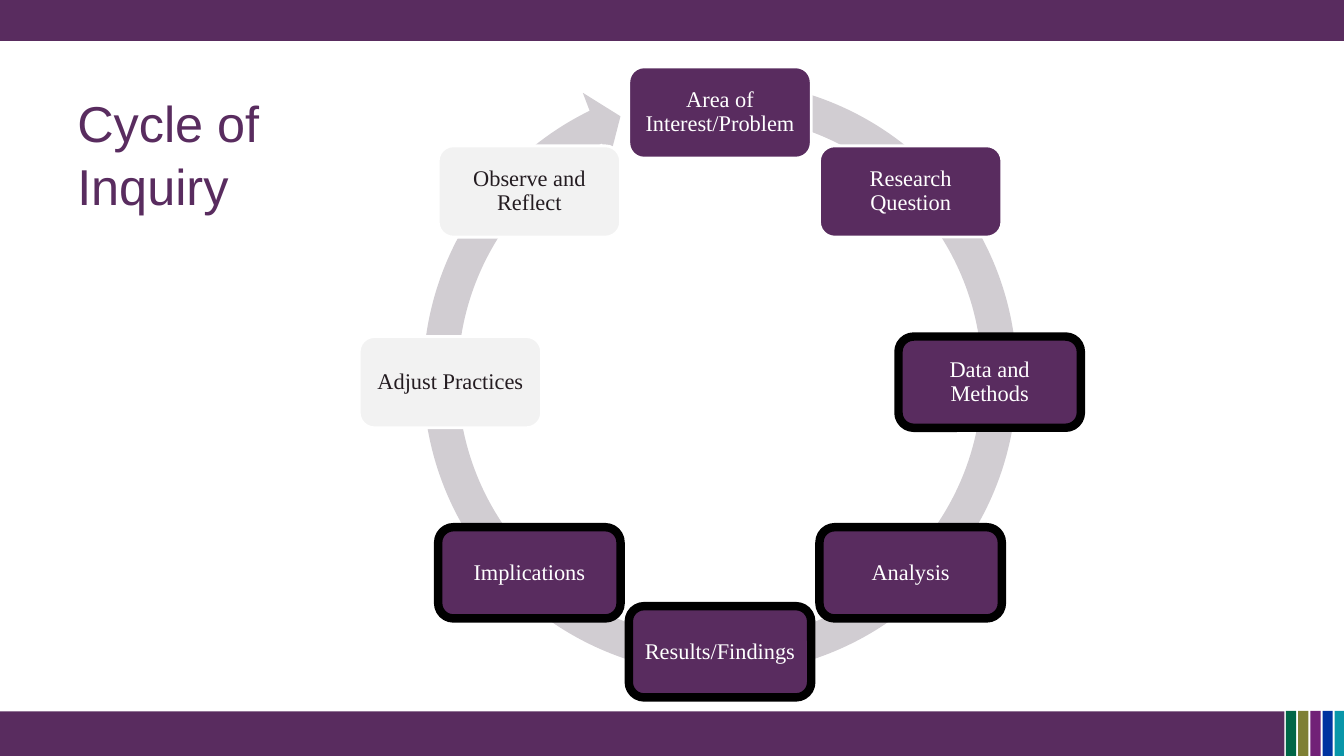
import math
import pptx
import pptx.util
import pptx.dml.color
import pptx.enum.shapes
import pptx.enum.text

Pt = pptx.util.Pt
RGB = pptx.dml.color.RGBColor.from_string
MSO = pptx.enum.shapes.MSO_SHAPE
ALIGN = pptx.enum.text.PP_ALIGN
ANCHOR = pptx.enum.text.MSO_ANCHOR

THEME = {
    "purple": "592C5F", "ring": "D1CDD2", "pale": "F2F2F2",
    "white": "FFFFFF", "black": "000000", "ink": "241C21",
    "stripes": ["006647", "7E8034", "712177", "0033A0", "0996A9"],
    "title_font": "Arial", "title_size": 36,
    "step_font": "Times New Roman", "step_size": 16,
}


def add_text(tf, text, font, size, color, align, spacing):
    tf.word_wrap = True
    tf.auto_size = pptx.enum.text.MSO_AUTO_SIZE.NONE
    tf.vertical_anchor = ANCHOR.MIDDLE
    p = tf.paragraphs[0]
    p.alignment = align
    p.line_spacing = spacing
    r = p.add_run()
    r.text = text
    r.font.name = font
    r.font.size = Pt(size)
    r.font.color.rgb = RGB(THEME[color])


def add_block(s, kind, x, y, w, h, fill):
    sp = s.shapes.add_shape(kind, Pt(x), Pt(y), Pt(w), Pt(h))
    sp.shadow.inherit = False
    sp.fill.solid()
    sp.fill.fore_color.rgb = RGB(fill)
    sp.line.fill.background()
    return sp


prs = pptx.Presentation()
prs.slide_width, prs.slide_height = Pt(960), Pt(540)
s = prs.slides.add_slide(prs.slide_layouts[5])

# Title
title = s.shapes.title
title.left, title.top, title.width, title.height = Pt(48), Pt(29.5), Pt(190), Pt(158.5)
add_text(title.text_frame, "Cycle of Inquiry", THEME["title_font"],
         THEME["title_size"], "purple", ALIGN.LEFT, 1.05)

# Top and bottom bands, with the colour stripes at the right
add_block(s, MSO.RECTANGLE, 0, 0, 960, 29.2, THEME["purple"])
add_block(s, MSO.RECTANGLE, 0, 508.2, 917.4, 31.8, THEME["purple"])
for i, color in enumerate(THEME["stripes"]):
    add_block(s, MSO.RECTANGLE, 918.6 + i * 8.7, 507.8, 7.3, 32.2, color)

# Ring arrow
cx, cy = 514.3, 273
ring = 451.6
arrow = add_block(s, MSO.CIRCULAR_ARROW, cx - ring / 2, 43.8, ring, ring, THEME["ring"])
for i, value in enumerate([0.055, 3.307, 146.174, 168.923, 0.058]):
    arrow.adjustments[i] = value

# Steps, clockwise from the top: text, fill, text colour, line colour, line width
plain = ("purple", "white", "white", 2)
framed = ("purple", "white", "black", 6)
pale = ("pale", "ink", "white", 2)
steps = [
    ("Area of Interest/Problem", plain),
    ("Research Question", plain),
    ("Data and Methods", framed),
    ("Analysis", framed),
    ("Results/Findings", framed),
    ("Implications", framed),
    ("Adjust Practices", pale),
    ("Observe and Reflect", pale),
]
radius, w, h = 192.6, 130.3, 65.2
for i, (text, (fill, ink, line, width)) in enumerate(steps):
    angle = 2 * math.pi * i / len(steps)
    x = cx + radius * math.sin(angle) - w / 2
    y = cy - radius * math.cos(angle) - h / 2
    sp = add_block(s, MSO.ROUNDED_RECTANGLE, x, y, w, h, THEME[fill])
    sp.line.color.rgb = RGB(THEME[line])
    sp.line.width = Pt(width)
    tf = sp.text_frame
    tf.margin_left = tf.margin_right = tf.margin_top = tf.margin_bottom = Pt(4.8)
    add_text(tf, text, THEME["step_font"], THEME["step_size"], ink, ALIGN.CENTER, 0.9)

prs.save("out.pptx")
